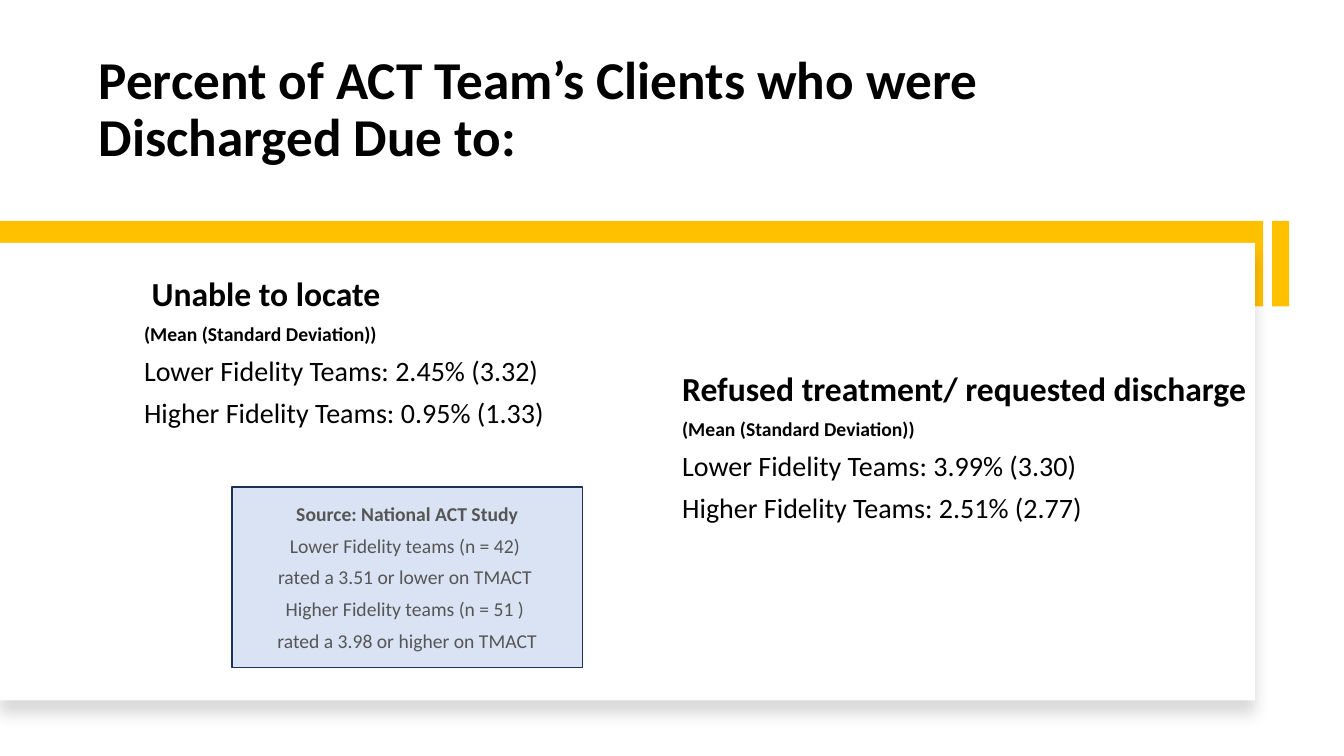
from lxml.etree import SubElement
from pptx import Presentation
from pptx.dml.color import RGBColor
from pptx.enum.shapes import MSO_SHAPE
from pptx.enum.text import MSO_ANCHOR, PP_ALIGN
from pptx.oxml.ns import qn
from pptx.util import Pt

FONT = "Calibri"
GOLD, WHITE, BLACK = "FFC000", "FFFFFF", "000000"
PALE_BLUE, NAVY, GRAY = "DAE3F3", "1E3256", "555555"


def color(value):
    return RGBColor.from_string(value)


def add_rect(s, x, y, w, h, fill):
    sp = s.shapes.add_shape(MSO_SHAPE.RECTANGLE, Pt(x), Pt(y), Pt(w), Pt(h))
    sp.shadow.inherit = False
    sp.fill.solid()
    sp.fill.fore_color.rgb = color(fill)
    sp.line.fill.background()
    return sp


def add_text_box(s, x, y, w, h):
    tf = s.shapes.add_textbox(Pt(x), Pt(y), Pt(w), Pt(h)).text_frame
    tf.word_wrap = True
    return tf


def write_lines(tf, lines, text_color, align=PP_ALIGN.LEFT, space_after=6):
    """Fill a text frame with (text, size, bold) lines."""
    for i, (text, size, bold) in enumerate(lines):
        p = tf.add_paragraph() if i else tf.paragraphs[0]
        p.text = text
        p.alignment = align
        p.space_after = Pt(space_after)
        for r in p.runs:
            r.font.name = FONT
            r.font.size = Pt(size)
            r.font.bold = bold
            r.font.color.rgb = color(text_color)


def add_soft_shadow(sp, blur, distance, opacity):
    """Cast a blurred black shadow straight down."""
    effects = sp._element.spPr.find(qn("a:effectLst"))
    shadow = SubElement(effects, qn("a:outerShdw"), blurRad=str(Pt(blur)),
                        dist=str(Pt(distance)), dir="5400000", algn="t", rotWithShape="0")
    black = SubElement(shadow, qn("a:srgbClr"), val=BLACK)
    SubElement(black, qn("a:alpha"), val=str(opacity * 1000))


def add_title(s, x, y, w, h, text):
    tf = add_text_box(s, x, y, w, h)
    tf.vertical_anchor = MSO_ANCHOR.BOTTOM
    write_lines(tf, [(text, 38, True)], BLACK, space_after=0)
    tf.paragraphs[0].line_spacing = 0.9


def add_panel(s, x, y, w, h):
    """White panel over a gold band that ends in a separate gold tab."""
    band_w, band_h, band_rise = w + 5.8, 61.2, 15.8
    add_rect(s, x + band_w + 6.5, y - band_rise, 12.2, band_h, GOLD)
    add_rect(s, x, y - band_rise, band_w, band_h, GOLD)
    add_soft_shadow(add_rect(s, x, y, w, h, WHITE), blur=11, distance=10, opacity=15)


def add_reason(s, x, y, w, h, heading, lower, higher):
    write_lines(add_text_box(s, x, y, w, h), [
        (heading, 24, True),
        ("(Mean (Standard Deviation))", 14, True),
        (f"Lower Fidelity Teams: {lower}", 20, False),
        (f"Higher Fidelity Teams: {higher}", 20, False),
    ], BLACK)


def add_source_note(s, x, y, w, h, heading, lines):
    sp = add_rect(s, x, y, w, h, PALE_BLUE)
    sp.line.color.rgb = color(NAVY)
    sp.line.width = Pt(1)
    tf = sp.text_frame
    tf.word_wrap = True
    tf.vertical_anchor = MSO_ANCHOR.MIDDLE
    write_lines(tf, [(heading, 14, True)] + [(line, 14, False) for line in lines],
                GRAY, PP_ALIGN.CENTER)


def main():
    prs = Presentation()
    prs.slide_width, prs.slide_height = Pt(960), Pt(540)
    s = prs.slides.add_slide(prs.slide_layouts[6])
    add_title(s, 63.4, 30.2, 727.2, 93.6,
              "Percent of ACT Team’s Clients who were Discharged Due to:")
    add_panel(s, 0, 173.5, 896.4, 326.9)
    add_reason(s, 95.8, 191.5, 333.4, 195.8, " Unable to locate",
               "2.45% (3.32)", "0.95% (1.33)")
    add_reason(s, 480.2, 259.2, 429.1, 216, "Refused treatment/ requested discharge",
               "3.99% (3.30)", "2.51% (2.77)")
    add_source_note(s, 165.6, 347.8, 250.6, 128.9, "Source: National ACT Study", [
        "Lower Fidelity teams (n = 42) ",
        "rated a 3.51 or lower on TMACT ",
        "Higher Fidelity teams (n = 51 ) ",
        "rated a 3.98 or higher on TMACT",
    ])
    prs.save("out.pptx")


if __name__ == "__main__":
    main()
